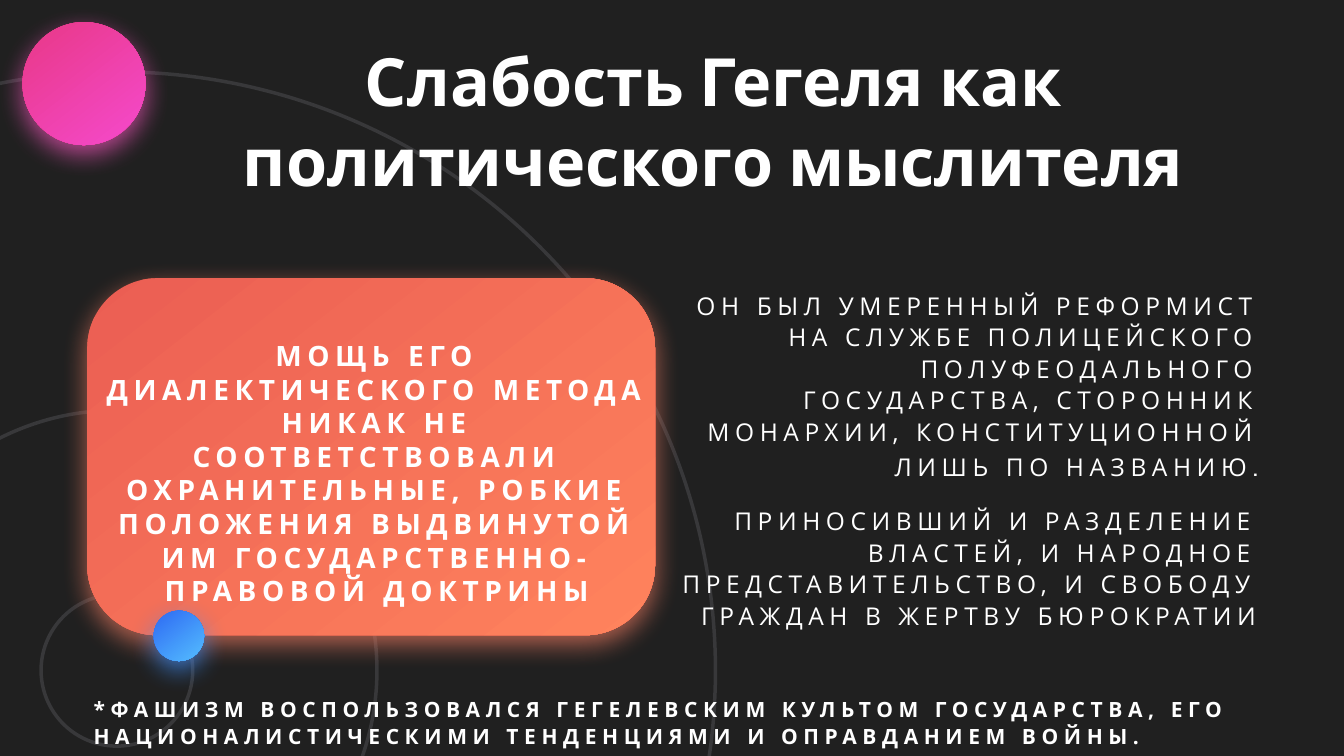
from dataclasses import dataclass

from lxml import etree
from pptx import Presentation
from pptx.dml.color import RGBColor
from pptx.enum.shapes import MSO_SHAPE
from pptx.enum.text import MSO_AUTO_SIZE, PP_ALIGN
from pptx.oxml.ns import qn
from pptx.util import Inches, Pt

OVAL = MSO_SHAPE.OVAL
ROUNDED = MSO_SHAPE.ROUNDED_RECTANGLE
GROW = MSO_AUTO_SIZE.SHAPE_TO_FIT_TEXT
LEFT, CENTER, RIGHT = PP_ALIGN.LEFT, PP_ALIGN.CENTER, PP_ALIGN.RIGHT

COLUMNS, ROWS = 160, 90
SLIDE_WIDTH, SLIDE_HEIGHT = Inches(26.67), Inches(15)


@dataclass(frozen=True)
class Theme:
    background: str = "202020"
    ring: str = "38383A"
    text: str = "FFFFFF"
    # Gradient start, gradient end, glow
    coral: tuple = ("EB5E53", "FF835D", "E4775F")
    pink: tuple = ("E83887", "F54ACC", "F056BA")
    blue: tuple = ("2E6AF3", "54BDFF", "408EF7")
    gradient_angle: int = 52
    heading_font: str = "Cabin"
    body_font: str = "Open Sans"
    title_size: int = 95
    card_size: int = 40
    body_size: int = 35
    note_size: int = 30
    tracking: int = 8


THEME = Theme()


def grid_box(column, row, columns, rows):
    """Turn grid units into left, top, width and height."""
    return (int(SLIDE_WIDTH * column / COLUMNS), int(SLIDE_HEIGHT * row / ROWS),
            int(SLIDE_WIDTH * columns / COLUMNS), int(SLIDE_HEIGHT * rows / ROWS))


def circle_box(center, radius):
    column, row = center
    return column - radius, row - radius, 2 * radius, 2 * radius


def add_ring(slide, center, radius):
    ring = slide.shapes.add_shape(OVAL, *grid_box(*circle_box(center, radius)))
    ring.shadow.inherit = False
    ring.fill.background()
    ring.line.color.rgb = RGBColor.from_string(THEME.ring)
    ring.line.width = Pt(5)


def add_glow(shape, color):
    """Cast a soft coloured shadow straight down."""
    shape.shadow.inherit = False
    effects = shape._element.spPr.find(qn("a:effectLst"))
    shadow = etree.SubElement(
        effects, qn("a:outerShdw"), blurRad=str(Pt(38)), dist=str(Pt(13.1)),
        dir=str(90 * 60000), algn="t", rotWithShape="0")
    tint = etree.SubElement(shadow, qn("a:srgbClr"), val=color)
    etree.SubElement(tint, qn("a:alpha"), val="75000")


def add_glowing_shape(slide, kind, box, colors):
    shape = slide.shapes.add_shape(kind, *grid_box(*box))
    *stops, glow = colors
    shape.line.fill.background()
    shape.fill.gradient()
    shape.fill.gradient_angle = 360 - THEME.gradient_angle
    for stop, color in zip(shape.fill.gradient_stops, stops):
        stop.color.rgb = RGBColor.from_string(color)
    add_glow(shape, glow)
    return shape


def add_text(slide, box, text, size, align, font=THEME.body_font, bold=False,
             tracking=THEME.tracking, spaced=False):
    text_box = slide.shapes.add_textbox(*grid_box(*box))
    frame = text_box.text_frame
    frame.word_wrap = True
    frame.auto_size = GROW
    frame.margin_left = frame.margin_right = Inches(0.1)
    frame.margin_top = frame.margin_bottom = Inches(0.1)
    paragraph = frame.paragraphs[0]
    paragraph.alignment = align
    if spaced:
        paragraph.line_spacing = 1.07
        paragraph.space_after = Pt(8)
    paragraph.font.name = font
    paragraph.font.size = Pt(size)
    paragraph.font.bold = bold
    paragraph.font.color.rgb = RGBColor.from_string(THEME.text)
    properties = paragraph._p.pPr.find(qn("a:defRPr"))
    properties.set("spc", str(tracking * 100))
    paragraph.add_run().text = text
    return paragraph


def add_full_stop(paragraph):
    """End the paragraph with a larger full stop in the heading font."""
    run = paragraph.add_run()
    run.text = "."
    run.font.name = THEME.heading_font
    run.font.size = Pt(THEME.card_size)
    run._r.get_or_add_rPr().set("spc", "500")


def main():
    presentation = Presentation()
    presentation.slide_width = SLIDE_WIDTH
    presentation.slide_height = SLIDE_HEIGHT
    slide = presentation.slides.add_slide(presentation.slide_layouts[6])
    slide.background.fill.solid()
    slide.background.fill.fore_color.rgb = RGBColor.from_string(THEME.background)

    for radius in (30.96, 9.03, 71.25):
        add_ring(slide, (13.92, 79.8), radius)

    card = add_glowing_shape(slide, ROUNDED, (10.38, 33.12, 67.6, 42.5), THEME.coral)
    card.adjustments[0] = 0.196

    add_text(slide, (21.3, 4.2, 127.25, 20.4),
             "Слабость Гегеля как политического мыслителя",
             THEME.title_size, CENTER, THEME.heading_font, bold=True, tracking=0)
    reformist = add_text(
        slide, (80, 33.8, 70.4, 24.2),
        "ОН БЫЛ УМЕРЕННЫЙ РЕФОРМИСТ НА СЛУЖБЕ ПОЛИЦЕЙСКОГО ПОЛУФЕОДАЛЬНОГО "
        "ГОСУДАРСТВА, СТОРОННИК МОНАРХИИ, КОНСТИТУЦИОННОЙ ЛИШЬ ПО НАЗВАНИЮ",
        THEME.body_size, RIGHT, spaced=True)
    add_full_stop(reformist)
    add_text(slide, (10.55, 82.1, 157.25, 7.55),
             "*ФАШИЗМ ВОСПОЛЬЗОВАЛСЯ ГЕГЕЛЕВСКИМ КУЛЬТОМ ГОСУДАРСТВА, ЕГО "
             "НАЦИОНАЛИСТИЧЕСКИМИ ТЕНДЕНЦИЯМИ И ОПРАВДАНИЕМ ВОЙНЫ.",
             THEME.note_size, LEFT, bold=True, spaced=True)
    add_text(slide, (79.75, 59.45, 70.4, 16.15),
             "ПРИНОСИВШИЙ И РАЗДЕЛЕНИЕ ВЛАСТЕЙ, И НАРОДНОЕ ПРЕДСТАВИТЕЛЬСТВО, "
             "И СВОБОДУ ГРАЖДАН В ЖЕРТВУ БЮРОКРАТИИ",
             THEME.body_size, RIGHT, spaced=True)

    add_glowing_shape(slide, OVAL, circle_box((10, 9.95), 7.32), THEME.pink)
    add_glowing_shape(slide, OVAL, circle_box((21.3, 75.7), 3), THEME.blue)

    add_text(slide, (11.05, 39.7, 67.6, 29.45),
             "МОЩЬ ЕГО ДИАЛЕКТИЧЕСКОГО МЕТОДА НИКАК НЕ СООТВЕТСТВОВАЛИ "
             "ОХРАНИТЕЛЬНЫЕ, РОБКИЕ ПОЛОЖЕНИЯ ВЫДВИНУТОЙ ИМ "
             "ГОСУДАРСТВЕННО-ПРАВОВОЙ ДОКТРИНЫ",
             THEME.card_size, CENTER, bold=True)

    presentation.save("out.pptx")


if __name__ == "__main__":
    main()
